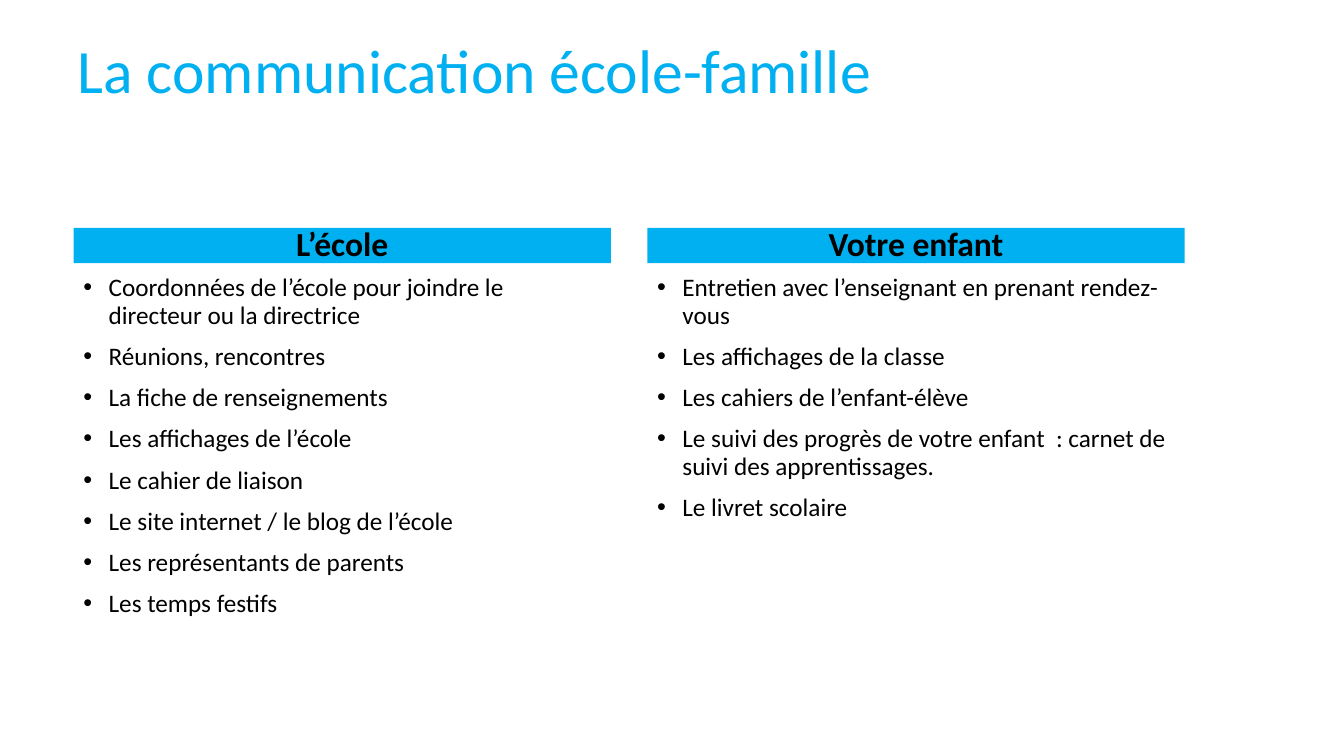
import pptx
import pptx.util
import pptx.dml.color
import pptx.enum.shapes
import pptx.enum.text
import lxml.etree
from dataclasses import dataclass

TITLE = "La communication école-famille"
COLUMNS = [
    ("L’école", [
        "Coordonnées de l’école pour joindre le directeur ou la directrice",
        "Réunions, rencontres",
        "La fiche de renseignements",
        "Les affichages de l’école",
        "Le cahier de liaison",
        "Le site internet / le blog de l’école",
        "Les représentants de parents",
        "Les temps festifs",
    ]),
    ("Votre enfant", [
        "Entretien avec l’enseignant en prenant rendez-vous",
        "Les affichages de la classe",
        "Les cahiers de l’enfant-élève",
        "Le suivi des progrès de votre enfant  : carnet de suivi des apprentissages.",
        "Le livret scolaire",
    ]),
]


@dataclass(frozen=True)
class Theme:
    font: str = "Calibri"
    accent: str = "00B0F0"
    ink: str = "000000"
    title_size: int = 44
    heading_size: int = 24
    item_size: int = 18


THEME = Theme()
Inches = pptx.util.Inches
ALIGN = pptx.enum.text.PP_ALIGN
ANCHOR = pptx.enum.text.MSO_ANCHOR
COLUMN_LEFT, COLUMN_WIDTH, COLUMN_GAP = 0.73, 5.33, 0.36
HEADING_TOP, HEADING_HEIGHT = 2.26, 0.35
LIST_TOP, LIST_HEIGHT = 2.68, 4.02


def rgb(value):
    return pptx.dml.color.RGBColor.from_string(value)


def add_bullet(para):
    properties = para._p.get_or_add_pPr()
    properties.set("marL", str(Inches(0.25)))
    properties.set("indent", str(-Inches(0.25)))
    namespace = properties.nsmap["a"]
    for tag, name, value in (("buFont", "typeface", "Arial"), ("buChar", "char", "•")):
        lxml.etree.SubElement(properties, f"{{{namespace}}}{tag}").set(name, value)


def write(box, lines, size, color=THEME.ink, bold=False, align=ALIGN.LEFT,
          anchor=ANCHOR.TOP, inset=0.05, bullets=False):
    frame = box.text_frame
    frame.word_wrap = True
    frame.auto_size = pptx.enum.text.MSO_AUTO_SIZE.NONE
    frame.vertical_anchor = anchor
    frame.margin_left = frame.margin_right = Inches(0.1)
    frame.margin_top = frame.margin_bottom = Inches(inset)
    for index, line in enumerate(lines):
        para = frame.add_paragraph() if index else frame.paragraphs[0]
        para.alignment = align
        para.line_spacing = 0.9
        para.space_before = pptx.util.Pt(10 if index else 0)
        if bullets:
            add_bullet(para)
        span = para.add_run()
        span.text = line
        span.font.name = THEME.font
        span.font.size = pptx.util.Pt(size)
        span.font.bold = bold
        span.font.color.rgb = rgb(color)


def add_column(page, left, heading, items):
    band = page.shapes.add_shape(
        pptx.enum.shapes.MSO_SHAPE.RECTANGLE, Inches(left), Inches(HEADING_TOP),
        Inches(COLUMN_WIDTH), Inches(HEADING_HEIGHT))
    band.shadow.inherit = False
    band.fill.solid()
    band.fill.fore_color.rgb = rgb(THEME.accent)
    band.line.fill.background()
    write(band, [heading], THEME.heading_size, bold=True, align=ALIGN.CENTER,
          anchor=ANCHOR.MIDDLE, inset=0)
    box = page.shapes.add_textbox(
        Inches(left), Inches(LIST_TOP), Inches(COLUMN_WIDTH), Inches(LIST_HEIGHT))
    write(box, items, THEME.item_size, bullets=True)


def main():
    deck = pptx.Presentation()
    deck.slide_width, deck.slide_height = Inches(13.33), Inches(7.5)
    page = deck.slides.add_slide(deck.slide_layouts.get_by_name("Title Only"))
    title = page.shapes.title
    title.left, title.top = Inches(0.67), Inches(0)
    title.width, title.height = Inches(11.5), Inches(1.45)
    write(title, [TITLE], THEME.title_size, color=THEME.accent, anchor=ANCHOR.MIDDLE)
    for index, (heading, items) in enumerate(COLUMNS):
        left = COLUMN_LEFT + index * (COLUMN_WIDTH + COLUMN_GAP)
        add_column(page, left, heading, items)
    deck.save("out.pptx")


if __name__ == "__main__":
    main()
